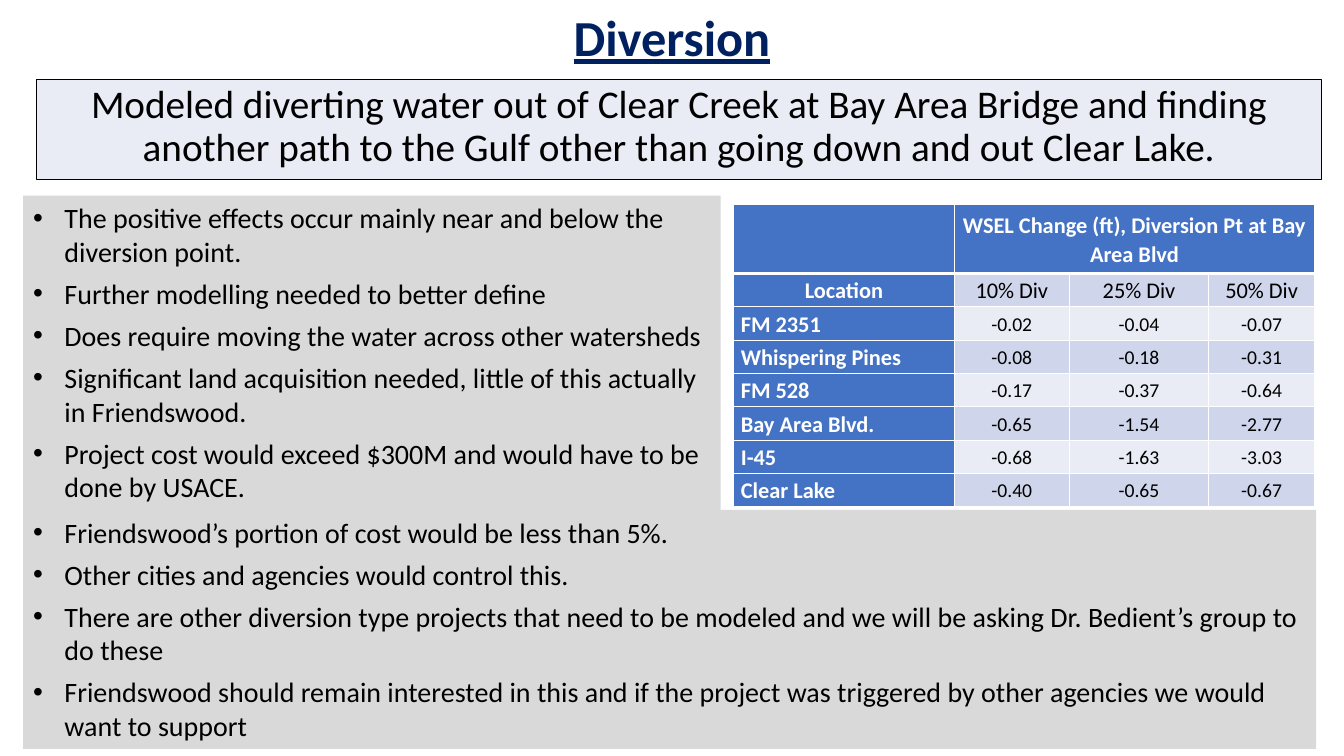
from dataclasses import dataclass

from lxml import etree
from pptx import Presentation
from pptx import util as u
from pptx.dml.color import RGBColor
from pptx.enum import text
from pptx.oxml import ns

ALIGN = text.PP_ALIGN
ANCHOR = text.MSO_ANCHOR


@dataclass(frozen=True)
class Theme:
    font: str = "Calibri"
    navy: str = "002060"
    black: str = "000000"
    white: str = "FFFFFF"
    blue: str = "4472C4"
    band_dark: str = "CFD5EA"
    band_light: str = "E9EBF5"
    gray: str = "D9D9D9"
    title: int = 36
    banner: int = 28
    body: int = 20
    label: int = 16
    value: int = 14


THEME = Theme()

BANNER = (
    "Modeled diverting water out of Clear Creek at Bay Area Bridge and finding "
    "another path to the Gulf other than going down and out Clear Lake."
)
EFFECTS = [
    "The positive effects occur mainly near and below the diversion point.",
    "Further modelling needed to better define",
    "Does require moving the water across other watersheds",
    "Significant land acquisition needed, little of this actually in Friendswood.",
    "Project cost would exceed $300M and would have to be done by USACE.",
]
OUTLOOK = [
    "Friendswood’s portion of cost would be less than 5%.",
    "Other cities and agencies would control this.",
    "There are other diversion type projects that need to be modeled and we will be "
    "asking Dr. Bedient’s group to do these",
    "Friendswood should remain interested in this and if the project was triggered by "
    "other agencies we would want to support",
]
TABLE_TITLE = "WSEL Change (ft), Diversion Pt at Bay Area Blvd"
LEVELS = [
    ("Location", "10% Div", "25% Div", "50% Div"),
    ("FM 2351", "-0.02", "-0.04", "-0.07"),
    ("Whispering Pines", "-0.08", "-0.18", "-0.31"),
    ("FM 528", "-0.17", "-0.37", "-0.64"),
    ("Bay Area Blvd.", "-0.65", "-1.54", "-2.77"),
    ("I-45", "-0.68", "-1.63", "-3.03"),
    ("Clear Lake", "-0.40", "-0.65", "-0.67"),
]
COLUMN_WIDTHS = (5.56, 2.9, 3.51, 2.67)
HEADER_HEIGHT, ROW_HEIGHT = 1.73, 0.84


def paint(target, color):
    target.fill.solid()
    target.fill.fore_color.rgb = RGBColor.from_string(color)


def write(para, words, size, color=THEME.black, bold=False, underline=False,
          align=ALIGN.LEFT, spacing=1.0, before=0, after=0):
    para.alignment = align
    para.line_spacing = spacing
    para.space_before, para.space_after = u.Pt(before), u.Pt(after)
    span = para.add_run()
    span.text = words
    font = span.font
    font.name, font.size = THEME.font, u.Pt(size)
    font.bold, font.underline = bold, underline
    font.color.rgb = RGBColor.from_string(color)


def place(shape, box, anchor):
    shape.left, shape.top, shape.width, shape.height = (u.Cm(side) for side in box)
    frame = shape.text_frame
    frame.word_wrap = True
    frame.auto_size = text.MSO_AUTO_SIZE.NONE
    frame.vertical_anchor = anchor
    return frame


def add_bullet(para, indent=0.79):
    props = para._p.get_or_add_pPr()
    props.set("marL", str(u.Cm(indent)))
    props.set("indent", str(-u.Cm(indent)))
    etree.SubElement(props, ns.qn("a:buFont"), typeface="Arial")
    etree.SubElement(props, ns.qn("a:buChar"), char="•")


def set_borders(cell, top=1, bottom=1):
    props = cell._tc.get_or_add_tcPr()
    widths = {"lnL": 1, "lnR": 1, "lnT": top, "lnB": bottom}
    for position, (side, width) in enumerate(widths.items()):
        line = etree.Element(ns.qn(f"a:{side}"), w=str(u.Pt(width)))
        fill = etree.SubElement(line, ns.qn("a:solidFill"))
        etree.SubElement(fill, ns.qn("a:srgbClr"), val=THEME.white)
        props.insert(position, line)


def fill_title(shape, box):
    frame = place(shape, box, ANCHOR.MIDDLE)
    write(frame.paragraphs[0], "Diversion", THEME.title, THEME.navy, bold=True,
          underline=True, align=ALIGN.CENTER, spacing=0.9)


def fill_banner(shape, box):
    frame = place(shape, box, ANCHOR.TOP)
    paint(shape, THEME.band_light)
    shape.line.color.rgb = RGBColor.from_string(THEME.black)
    shape.line.width = u.Pt(0.75)
    write(frame.paragraphs[0], BANNER, THEME.banner, align=ALIGN.CENTER,
          spacing=0.9, before=10)


def fill_list(shape, box, items):
    frame = place(shape, box, ANCHOR.TOP)
    paint(shape, THEME.gray)
    for index, item in enumerate(items):
        para = frame.add_paragraph() if index else frame.paragraphs[0]
        write(para, item, THEME.body, after=6)
        add_bullet(para)


def style_cell(cell, fill, words="", top=1, bottom=1, **style):
    cell.vertical_anchor = ANCHOR.MIDDLE
    cell.margin_left = cell.margin_right = u.Cm(0.18)
    cell.margin_top = cell.margin_bottom = 0
    paint(cell, fill)
    set_borders(cell, top, bottom)
    if words:
        write(cell.text_frame.paragraphs[0], words, spacing=1.07, **style)


def add_level_table(page, box):
    rows, columns = len(LEVELS) + 1, len(COLUMN_WIDTHS)
    table = page.shapes.add_table(rows, columns, *(u.Cm(side) for side in box)).table
    table.first_row = table.horz_banding = False
    for column, width in zip(table.columns, COLUMN_WIDTHS):
        column.width = u.Cm(width)
    for index, row in enumerate(table.rows):
        row.height = u.Cm(ROW_HEIGHT if index else HEADER_HEIGHT)

    heading = dict(size=THEME.label, color=THEME.white, bold=True)
    table.cell(0, 1).merge(table.cell(0, columns - 1))
    for col in range(columns):
        style_cell(table.cell(0, col), THEME.blue, TABLE_TITLE if col == 1 else "",
                   bottom=3, align=ALIGN.CENTER, **heading)

    for row, record in enumerate(LEVELS, 1):
        band = THEME.band_dark if row % 2 else THEME.band_light
        top = 3 if row == 1 else 1
        for col, words in enumerate(record):
            cell = table.cell(row, col)
            if col == 0:
                align = ALIGN.CENTER if row == 1 else ALIGN.LEFT
                style_cell(cell, THEME.blue, words, top, align=align, **heading)
            else:
                size = THEME.label if row == 1 else THEME.value
                style_cell(cell, band, words, top, size=size, align=ALIGN.CENTER)


def build_diversion_slide(deck):
    page = deck.slides.add_slide(deck.slide_layouts.get_by_name("Comparison"))
    holders = {shape.placeholder_format.idx: shape for shape in page.placeholders}
    fill_title(holders[0], (0.74, 0.41, 32.39, 1.22))
    fill_banner(holders[1], (0.91, 2.01, 32.39, 2.51))
    fill_list(holders[2], (0.58, 4.93, 17.58, 7.95), EFFECTS)
    fill_list(holders[4], (0.58, 12.85, 32.59, 6.02), OUTLOOK)
    unused = holders[3].element
    unused.getparent().remove(unused)
    table_height = HEADER_HEIGHT + ROW_HEIGHT * len(LEVELS)
    add_level_table(page, (18.49, 5.16, sum(COLUMN_WIDTHS), table_height))


def main():
    deck = Presentation()
    deck.slide_width, deck.slide_height = u.Cm(33.87), u.Cm(19.05)
    build_diversion_slide(deck)
    deck.save("out.pptx")


if __name__ == "__main__":
    main()
